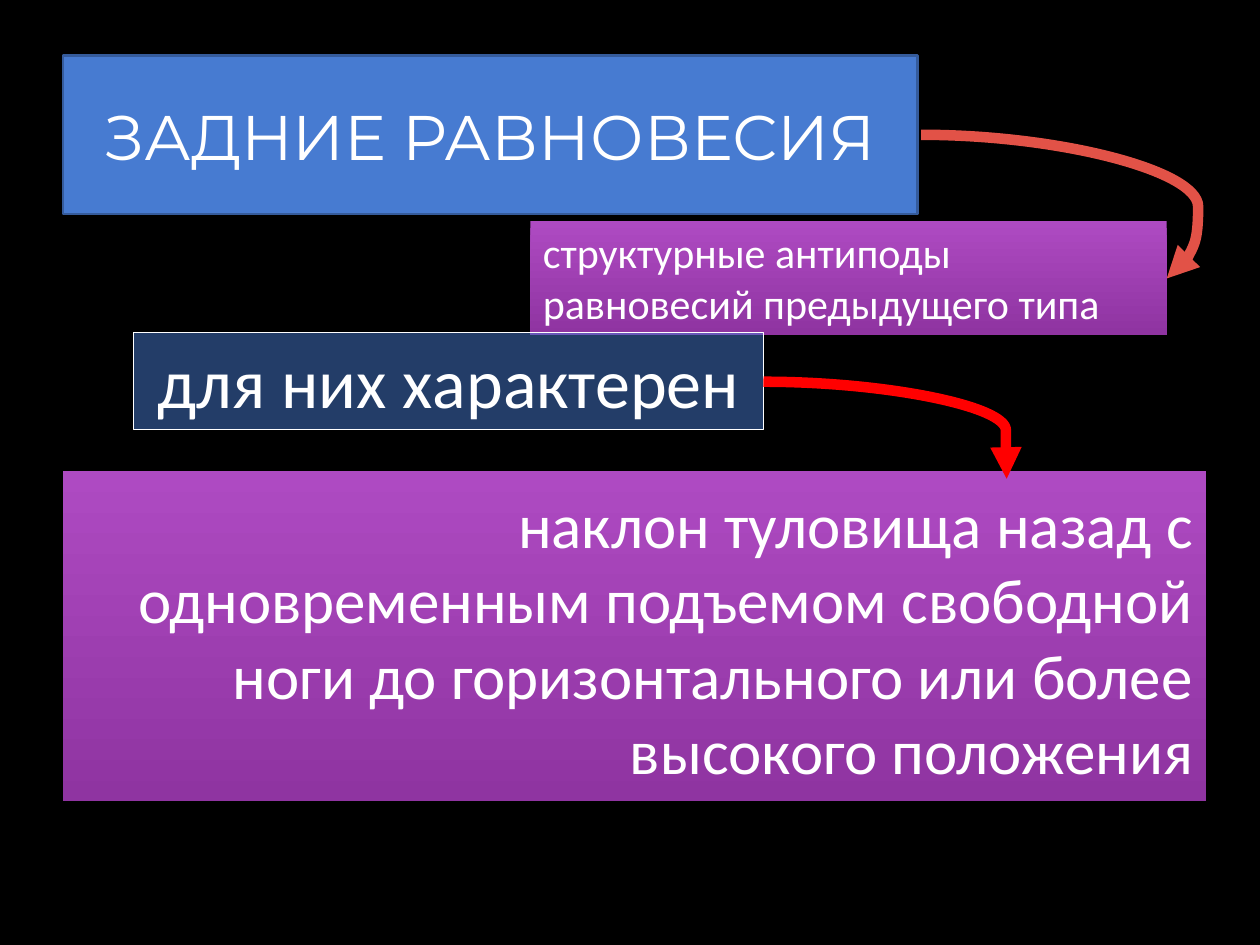
from dataclasses import dataclass

from lxml import etree
from pptx import Presentation
from pptx.dml.color import RGBColor
from pptx.enum.shapes import MSO_CONNECTOR, MSO_SHAPE
from pptx.enum.text import MSO_ANCHOR, MSO_AUTO_SIZE, PP_ALIGN
from pptx.oxml.ns import qn
from pptx.shapes.autoshape import Shape
from pptx.slide import Slide
from pptx.util import Inches, Pt

RECTANGLE, CURVE = MSO_SHAPE.RECTANGLE, MSO_CONNECTOR.CURVE
LEFT, CENTER, RIGHT = PP_ALIGN.LEFT, PP_ALIGN.CENTER, PP_ALIGN.RIGHT
TOP, MIDDLE = MSO_ANCHOR.TOP, MSO_ANCHOR.MIDDLE
NO_FIT, GROW = MSO_AUTO_SIZE.NONE, MSO_AUTO_SIZE.SHAPE_TO_FIT_TEXT

BLUE, WHITE = "477BD1", "FFFFFF"
PURPLE_GRADIENT = ("AE4AC2", "8F34A1")


@dataclass
class Box:
    text: str
    position: tuple[float, float, float, float]
    fill: tuple[str, ...]
    size: float
    align: PP_ALIGN
    font: str = "Calibri"
    line: tuple[str, float] | None = None
    opacity: int = 100
    placeholder: int | None = None
    space_after: float = 0


@dataclass
class CurvedArrow:
    start: tuple[float, float]
    end: tuple[float, float]
    color: str
    bend: float


BOXES = [
    Box("ЗАДНИЕ РАВНОВЕСИЯ", (0.5, 0.44, 6.78, 1.26), (BLUE,), 36, CENTER,
        font="Montserrat", line=("355B9B", 1.5), placeholder=0),
    Box("наклон туловища назад с одновременным подъемом свободной ноги "
        "до горизонтального или более высокого положения",
        (0.5, 3.74, 9.07, 2.62), PURPLE_GRADIENT, 36, RIGHT,
        placeholder=1, space_after=10),
    Box("структурные антиподы равновесий предыдущего типа",
        (4.21, 1.75, 5.05, 0.91), PURPLE_GRADIENT, 24, LEFT),
    Box("для них характерен", (1.06, 2.64, 5, 0.77), (BLUE,), 40, CENTER,
        line=(WHITE, 1), opacity=50),
]
ARROWS = [
    CurvedArrow((7.31, 1.07), (9.26, 2.21), "E25247", 1.128),
    CurvedArrow((6.06, 3.03), (7.99, 3.8), "FF0000", 0.997),
]


def rgb(color: str) -> RGBColor:
    return RGBColor.from_string(color)


def fill_shape(shape: Shape, colors: tuple[str, ...], opacity: int) -> None:
    """Fill with one colour, or with a gradient running from top to bottom."""
    if len(colors) > 1:
        shape.fill.gradient()
        shape.fill.gradient_angle = 270
        for stop, color in zip(shape.fill.gradient_stops, colors):
            stop.color.rgb = rgb(color)
        return
    shape.fill.solid()
    shape.fill.fore_color.rgb = rgb(colors[0])
    if opacity < 100:
        color_element = shape.element.spPr.find(f".//{qn('a:srgbClr')}")
        etree.SubElement(color_element, qn("a:alpha"), val=str(opacity * 1000))


def write_text(shape: Shape, box: Box) -> None:
    text_frame = shape.text_frame
    text_frame.text = box.text
    text_frame.word_wrap = True
    is_placeholder = box.placeholder is not None
    text_frame.vertical_anchor = MIDDLE if is_placeholder else TOP
    text_frame.auto_size = NO_FIT if is_placeholder else GROW
    paragraph = text_frame.paragraphs[0]
    paragraph.alignment = box.align
    paragraph.space_before = Pt(0)
    paragraph.space_after = Pt(box.space_after)
    if is_placeholder:
        properties = paragraph._p.get_or_add_pPr()
        properties.set("marL", "0")
        properties.set("indent", "0")
        etree.SubElement(properties, qn("a:buNone"))
    font = paragraph.runs[0].font
    font.name = box.font
    font.size = Pt(box.size)
    font.color.rgb = rgb(WHITE)


def draw_box(slide: Slide, box: Box) -> None:
    left, top, width, height = map(Inches, box.position)
    if box.placeholder is None:
        shape = slide.shapes.add_shape(RECTANGLE, left, top, width, height)
    else:
        shape = slide.placeholders[box.placeholder]
        shape.left, shape.top, shape.width, shape.height = left, top, width, height
    fill_shape(shape, box.fill, box.opacity)
    if box.line:
        color, width_points = box.line
        shape.line.color.rgb = rgb(color)
        shape.line.width = Pt(width_points)
    else:
        shape.line.fill.background()
    shape.shadow.inherit = False
    write_text(shape, box)


def draw_arrow(slide: Slide, arrow: CurvedArrow) -> None:
    connector = slide.shapes.add_connector(
        CURVE, *map(Inches, arrow.start + arrow.end))
    connector.line.color.rgb = rgb(arrow.color)
    connector.line.width = Pt(6)
    etree.SubElement(connector.line._get_or_add_ln(), qn("a:tailEnd"), type="triangle")
    properties = connector._element.spPr
    etree.SubElement(properties, qn("a:effectLst"))
    adjustments = properties.find(f".//{qn('a:avLst')}")
    etree.SubElement(adjustments, qn("a:gd"), name="adj1",
                     fmla=f"val {round(arrow.bend * 100000)}")


def main() -> None:
    presentation = Presentation()
    presentation.slide_width, presentation.slide_height = Inches(10), Inches(7.5)
    slide = presentation.slides.add_slide(presentation.slide_layouts[1])
    slide.background.fill.solid()
    slide.background.fill.fore_color.rgb = rgb("000000")
    for box in BOXES:
        draw_box(slide, box)
    for arrow in ARROWS:
        draw_arrow(slide, arrow)
    presentation.save("out.pptx")


if __name__ == "__main__":
    main()
